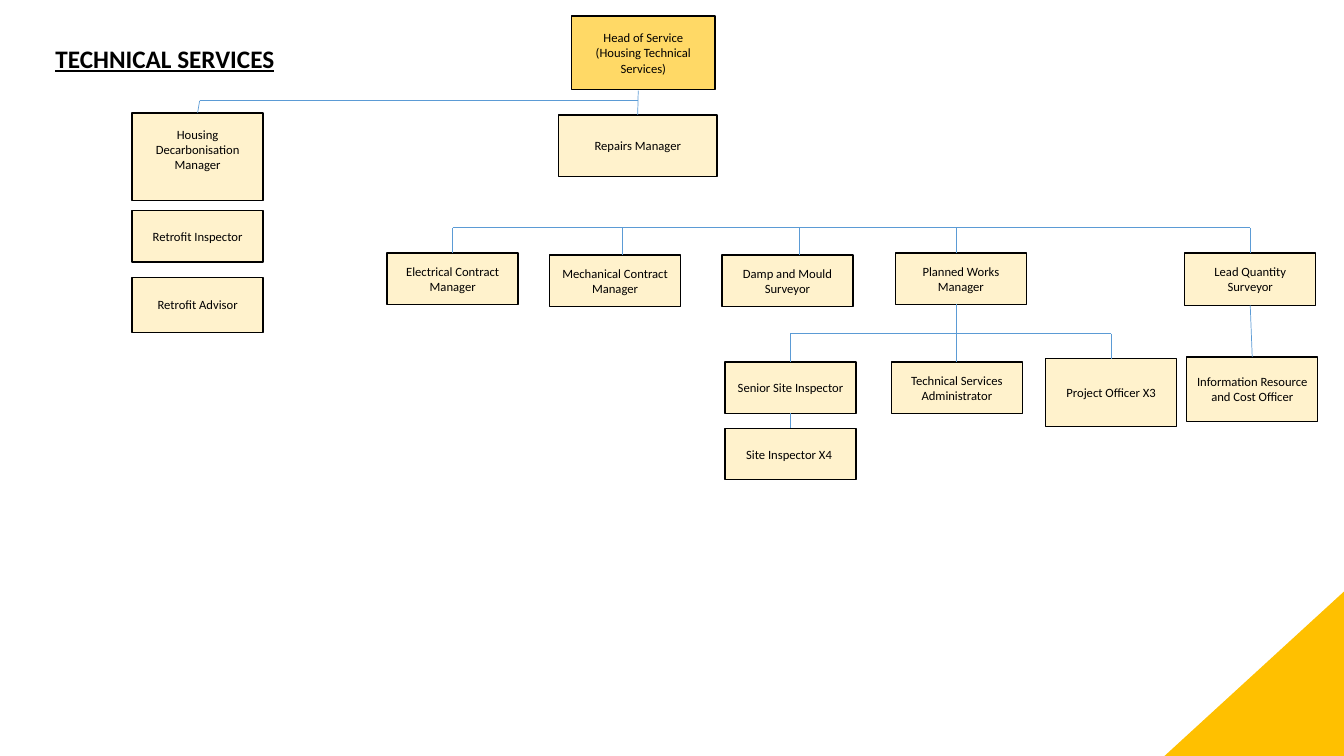
"""Build the Technical Services organisation chart slide."""
from dataclasses import dataclass
from typing import Optional

from lxml.etree import SubElement
from pptx import Presentation
from pptx.dml.color import RGBColor
from pptx.enum.shapes import MSO_CONNECTOR as Connector, MSO_SHAPE as Shape
from pptx.enum.text import MSO_ANCHOR as Anchor, MSO_AUTO_SIZE as AutoSize, PP_ALIGN as Align
from pptx.oxml.ns import qn
from pptx.shapes.autoshape import Shape as AutoShape
from pptx.slide import Slide
from pptx.text.text import Font
from pptx.util import Inches, Pt

FONT = "Calibri"
BLACK, CREAM, GOLD, AMBER, BLUE = "000000", "FFF2CC", "FFD966", "FFC000", "5B9BD5"
TOP, BOTTOM = 0, 2
HEAD_BAR, MANAGER_BAR, PLANNED_BAR = 1.0, 2.26, 3.31


@dataclass
class Post:
    title: str
    left: float
    top: float
    width: float = 1.3
    height: float = 0.51
    fill: str = CREAM
    bottom_inset: float = 0.05


@dataclass
class Link:
    x1: float
    y1: float
    x2: float
    y2: float
    above: Optional[str] = None
    below: Optional[str] = None


POSTS = [
    Post("Head of Service (Housing Technical Services)", 5.67, 0.16, 1.42, 0.73, GOLD),
    Post("Repairs Manager", 5.54, 1.14, 1.57, 0.61),
    Post("Housing Decarbonisation Manager", 1.31, 1.12, height=0.87, bottom_inset=0.2),
    Post("Retrofit Inspector", 1.31, 2.09),
    Post("Retrofit Advisor", 1.31, 2.75, height=0.55),
    Post("Electrical Contract Manager", 3.84, 2.51),
    Post("Mechanical Contract Manager", 5.45, 2.53),
    Post("Damp and Mould Surveyor", 7.16, 2.53),
    Post("Planned Works Manager", 8.88, 2.51),
    Post("Lead Quantity Surveyor", 11.75, 2.51, height=0.52),
    Post("Senior Site Inspector", 7.19, 3.59),
    Post("Technical Services Administrator", 8.84, 3.59),
    Post("Project Officer X3", 10.37, 3.56, height=0.67),
    Post("Information Resource and Cost Officer", 11.77, 3.54, height=0.64),
    Post("Site Inspector X4 ", 7.19, 4.25),
]

LINKS = [
    Link(6.33, HEAD_BAR, 1.98, HEAD_BAR),
    Link(1.98, HEAD_BAR, 1.96, 1.12, below="Housing Decarbonisation Manager"),
    Link(6.33, 0.9, 6.33, 1.14, below="Repairs Manager"),
    Link(4.49, MANAGER_BAR, 12.4, MANAGER_BAR),
    Link(4.49, MANAGER_BAR, 4.49, 2.51, below="Electrical Contract Manager"),
    Link(6.17, MANAGER_BAR, 6.17, 2.53),
    Link(7.93, MANAGER_BAR, 7.93, 2.53),
    Link(9.49, MANAGER_BAR, 9.49, 2.51),
    Link(12.4, MANAGER_BAR, 12.4, 2.51, below="Lead Quantity Surveyor"),
    Link(7.84, PLANNED_BAR, 11.02, PLANNED_BAR),
    Link(7.84, PLANNED_BAR, 7.84, 3.59, below="Senior Site Inspector"),
    Link(9.49, 3.02, 9.49, 3.59, below="Technical Services Administrator"),
    Link(11.02, PLANNED_BAR, 11.02, 3.56, below="Project Officer X3"),
    Link(12.4, 3.03, 12.42, 3.54, "Lead Quantity Surveyor", "Information Resource and Cost Officer"),
    Link(7.84, 4.1, 7.84, 4.25, "Senior Site Inspector", "Site Inspector X4 "),
]


def color(value: str) -> RGBColor:
    return RGBColor.from_string(value)


def set_font(font: Font, size: float) -> None:
    font.name = FONT
    font.size = Pt(size)
    font.color.rgb = color(BLACK)


def add_title(slide: Slide) -> None:
    title = slide.shapes.title
    title.left, title.top = Inches(0.45), Inches(0.38)
    title.width, title.height = Inches(3.63), Inches(0.4)
    frame = title.text_frame
    frame.text = "TECHNICAL SERVICES"
    frame.auto_size = AutoSize.NONE
    frame.vertical_anchor = Anchor.TOP
    paragraph = frame.paragraphs[0]
    paragraph.alignment = Align.LEFT
    set_font(paragraph.font, 18)
    paragraph.font.bold = True
    paragraph.font.underline = True


def add_corner(slide: Slide) -> None:
    corner = slide.shapes.add_shape(
        Shape.RIGHT_TRIANGLE, Inches(11.55), Inches(5.86), Inches(1.79), Inches(1.64)
    )
    corner.shadow.inherit = False
    corner.fill.solid()
    corner.fill.fore_color.rgb = color(AMBER)
    corner.line.fill.background()
    corner._element.spPr.find(qn("a:xfrm")).set("flipH", "1")


def add_post(slide: Slide, post: Post) -> AutoShape:
    box = slide.shapes.add_shape(
        Shape.RECTANGLE, Inches(post.left), Inches(post.top), Inches(post.width), Inches(post.height)
    )
    box.shadow.inherit = False
    box.fill.solid()
    box.fill.fore_color.rgb = color(post.fill)
    box.line.color.rgb = color(BLACK)
    box.line.width = Pt(1)
    frame = box.text_frame
    frame.text = post.title
    frame.word_wrap = True
    frame.vertical_anchor = Anchor.MIDDLE
    frame.margin_bottom = Inches(post.bottom_inset)
    paragraph = frame.paragraphs[0]
    paragraph.alignment = Align.CENTER
    set_font(paragraph.font, 9)
    return box


def add_link(slide: Slide, link: Link, boxes: dict[str, AutoShape]) -> None:
    line = slide.shapes.add_connector(
        Connector.STRAIGHT, Inches(link.x1), Inches(link.y1), Inches(link.x2), Inches(link.y2)
    )
    if link.above:
        line.begin_connect(boxes[link.above], BOTTOM)
    if link.below:
        line.end_connect(boxes[link.below], TOP)
    line.line.color.rgb = color(BLUE)
    line.line.width = Pt(0.5)
    SubElement(line._element.spPr, qn("a:effectLst"))


def main() -> None:
    presentation = Presentation()
    presentation.slide_width, presentation.slide_height = Inches(13.33), Inches(7.5)
    slide = presentation.slides.add_slide(presentation.slide_layouts.get_by_name("Title Only"))
    add_title(slide)
    add_corner(slide)
    boxes = {post.title: add_post(slide, post) for post in POSTS}
    for link in LINKS:
        add_link(slide, link, boxes)
    presentation.save("out.pptx")


if __name__ == "__main__":
    main()
